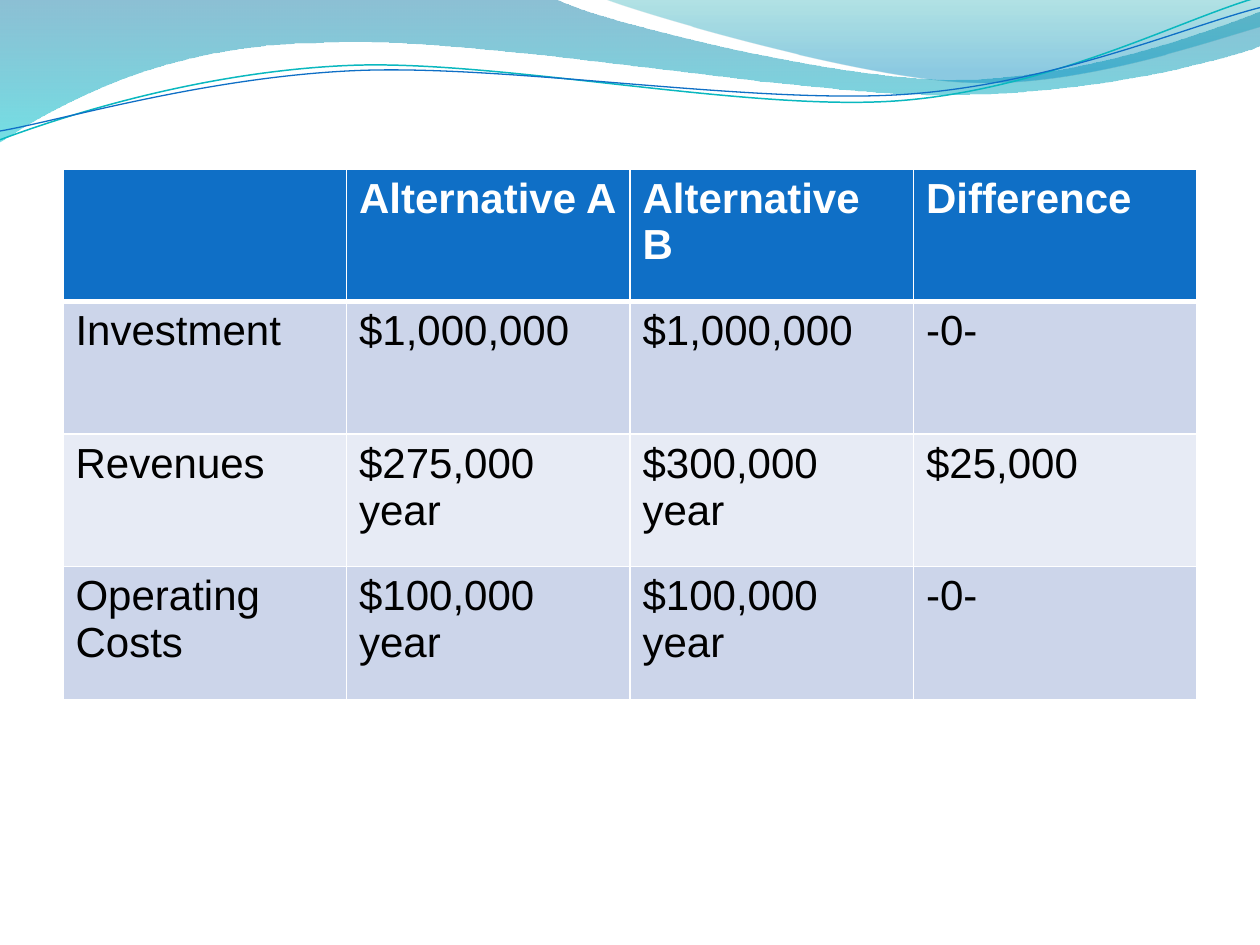
from math import cos, radians, sin

from lxml.etree import SubElement
from pptx import Presentation
from pptx.dml.color import RGBColor
from pptx.oxml.ns import qn
from pptx.util import Inches, Pt

COLORS = {
    "white": "FFFFFF", "black": "000000", "header": "0F6FC6",
    "band_dark": "CCD5EA", "band_light": "E7EBF5", "teal_line": "0AB8BF",
    "wave_blue": "0074A1", "wave_cyan": "00C6CF",
    "crest_teal": "00A1A9", "crest_blue": "008BBF",
}
FONT = "Arial"
CURVE_ROTATION = 357.3

ROWS = [
    ["", "Alternative A", "Alternative B", "Difference"],
    ["Investment", "$1,000,000", "$1,000,000", "-0-"],
    ["Revenues", "$275,000 year", "$300,000 year", "$25,000"],
    ["Operating Costs", "$100,000 year", "$100,000 year", "-0-"],
]

# Each outline is a start point followed by line (2 numbers) or Bézier (6 numbers) segments.
WAVE = [
    (0, -0.01), (4.4, -0.01), (4.76, 0.17, 6.64, 0.63, 7.58, 0.63),
    (8.53, 0.63, 9.58, 0.26, 10, 0.09), (10.01, 0.36),
    (9.83, 0.44, 8.7, 0.76, 7.46, 0.75), (6.22, 0.75, 3.82, 0.28, 2.57, 0.34),
    (1.29, 0.35, 0.46, 0.83, -0.01, 1.13), (0, -0.01),
]
CREST = [
    (4.79, -0.01), (5.09, 0.11, 6.82, 0.62, 7.69, 0.65),
    (8.56, 0.69, 9.61, 0.32, 10, 0.21), (10, 0), (4.79, -0.01),
]
TEAL_CURVE = [
    (0, 1.11), (0.48, 0.93, 1.58, 0.57, 2.77, 0.52),
    (3.95, 0.47, 5.93, 0.89, 7.13, 0.8), (8.33, 0.71, 9.38, 0.15, 9.98, -0.02),
]
BLUE_CURVE = [
    (0, 1.04), (0.47, 0.96, 1.64, 0.61, 2.83, 0.56),
    (4.03, 0.51, 5.97, 0.83, 7.17, 0.75), (8.36, 0.67, 9.41, 0.21, 10, 0.06),
]


def rgb(name):
    return RGBColor.from_string(COLORS[name])


def turn_back(box, outline, rotation):
    """Undo a rotation about the centre of the box."""
    left, top, width, height = box
    cx, cy = left + width / 2, top + height / 2
    c, s = cos(radians(-rotation)), sin(radians(-rotation))
    turned = []
    for seg in outline:
        pairs = [(x - cx, y - cy) for x, y in zip(seg[::2], seg[1::2])]
        turned.append([n for x, y in pairs
                       for n in (cx + x * c - y * s, cy + x * s + y * c)])
    return turned


def add_outline(slide, box, outline, close):
    """Add a freeform filling the box, with its six-number segments as true curves."""
    left, top, width, height = box
    ends = [(Inches(seg[-2]), Inches(seg[-1])) for seg in outline]
    builder = slide.shapes.build_freeform(*ends[0])
    builder.add_line_segments(ends[1:], close=close)
    sp = builder.convert_to_shape()
    sp.shadow.inherit = False
    sp.left, sp.top = Inches(left), Inches(top)
    sp.width, sp.height = Inches(width), Inches(height)

    geometry = next(sp._element.iter(qn("a:path")))
    geometry.set("w", str(sp.width))
    geometry.set("h", str(sp.height))
    for command, seg in zip(list(geometry), outline):
        if len(seg) == 6:
            curve = geometry.makeelement(qn("a:cubicBezTo"))
            geometry.replace(command, curve)
            command = curve
        for pt in list(command):
            command.remove(pt)
        for x, y in zip(seg[::2], seg[1::2]):
            SubElement(command, qn("a:pt"), x=str(Inches(x - left)),
                       y=str(Inches(y - top)))
    return sp


def add_gradient_wave(slide, box, outline, stops):
    """Stops are (position, colour name, opacity in percent), from top to bottom."""
    sp = add_outline(slide, box, outline, True)
    sp.line.fill.background()
    sp.fill.gradient()
    sp.fill.gradient_angle = 270
    for stop, (position, color, _) in zip(sp.fill.gradient_stops, stops):
        stop.position = position
        stop.color.rgb = rgb(color)
    clrs = list(sp._element.spPr.iter(qn("a:srgbClr")))
    for clr, (_, _, opacity) in zip(clrs, stops):
        SubElement(clr, qn("a:alpha"), val=str(opacity * 1000))


def add_curve(slide, box, outline, color, width):
    sp = add_outline(slide, box, turn_back(box, outline, CURVE_ROTATION), False)
    sp.rotation = CURVE_ROTATION
    sp.fill.background()
    sp.line.color.rgb = rgb(color)
    sp.line.width = Pt(width)


def add_wave_header(slide):
    add_gradient_wave(slide, (-0.01, -0.01, 10.02, 1.14), WAVE,
                      [(0, "wave_blue", 45), (1, "wave_cyan", 55)])
    add_gradient_wave(slide, (4.79, -0.01, 5.21, 0.7), CREST,
                      [(0, "crest_teal", 30), (0.8, "crest_blue", 45)])
    add_curve(slide, (-0.02, 0.22, 10.02, 0.71), TEAL_CURVE, "teal_line", 0.85)
    add_curve(slide, (-0.02, 0.3, 10.03, 0.58), BLUE_CURVE, "header", 0.75)


def set_borders(cell, widths):
    tc_pr = cell._tc.get_or_add_tcPr()
    for side, width in widths.items():
        ln = SubElement(tc_pr, qn(f"a:ln{side}"), w=str(Pt(width)))
        fill = SubElement(ln, qn("a:solidFill"))
        SubElement(fill, qn("a:srgbClr"), val=COLORS["white"])


def fill_cell(cell, text, row):
    is_header = row == 0
    set_borders(cell, {"L": 1, "R": 1, "T": 3 if row == 1 else 1,
                       "B": 3 if is_header else 1})
    band = "band_dark" if row % 2 else "band_light"
    cell.fill.solid()
    cell.fill.fore_color.rgb = rgb("header" if is_header else band)
    cell.text_frame.text = text
    for r in cell.text_frame.paragraphs[0].runs:
        r.font.name = FONT
        r.font.size = Pt(24)
        r.font.bold = is_header
        r.font.color.rgb = rgb("white" if is_header else "black")


def add_comparison_table(slide, left, top, width, height):
    frame = slide.shapes.add_table(len(ROWS), len(ROWS[0]), Inches(left),
                                   Inches(top), Inches(width), Inches(height))
    for i, row in enumerate(ROWS):
        for j, text in enumerate(row):
            fill_cell(frame.table.cell(i, j), text, i)


def main():
    prs = Presentation()
    prs.slide_width, prs.slide_height = Inches(10), Inches(7.5)
    slide = prs.slides.add_slide(prs.slide_layouts[6])
    add_wave_header(slide)
    add_comparison_table(slide, 0.5, 1.34, 9, 4.21)
    prs.save("out.pptx")


if __name__ == "__main__":
    main()
